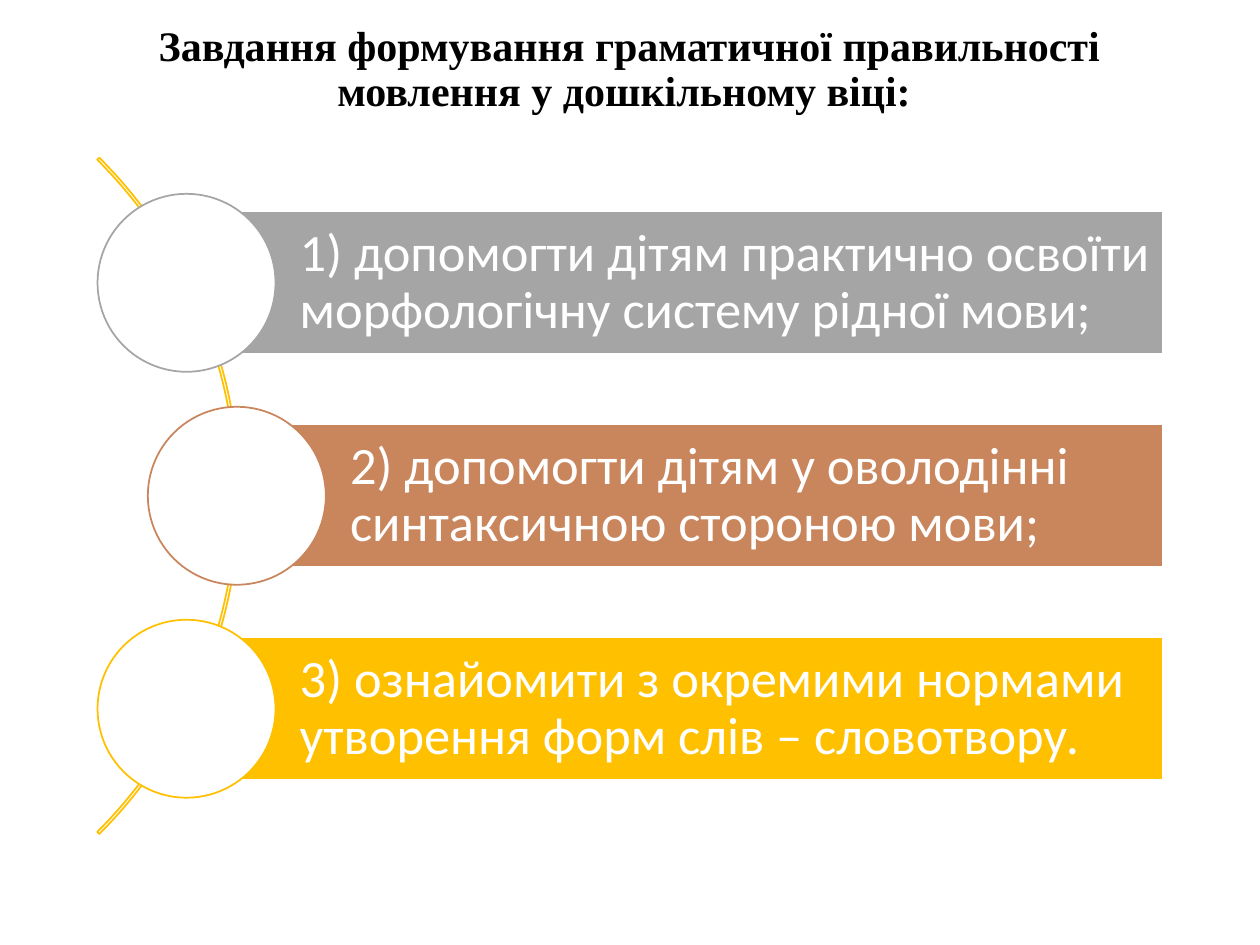
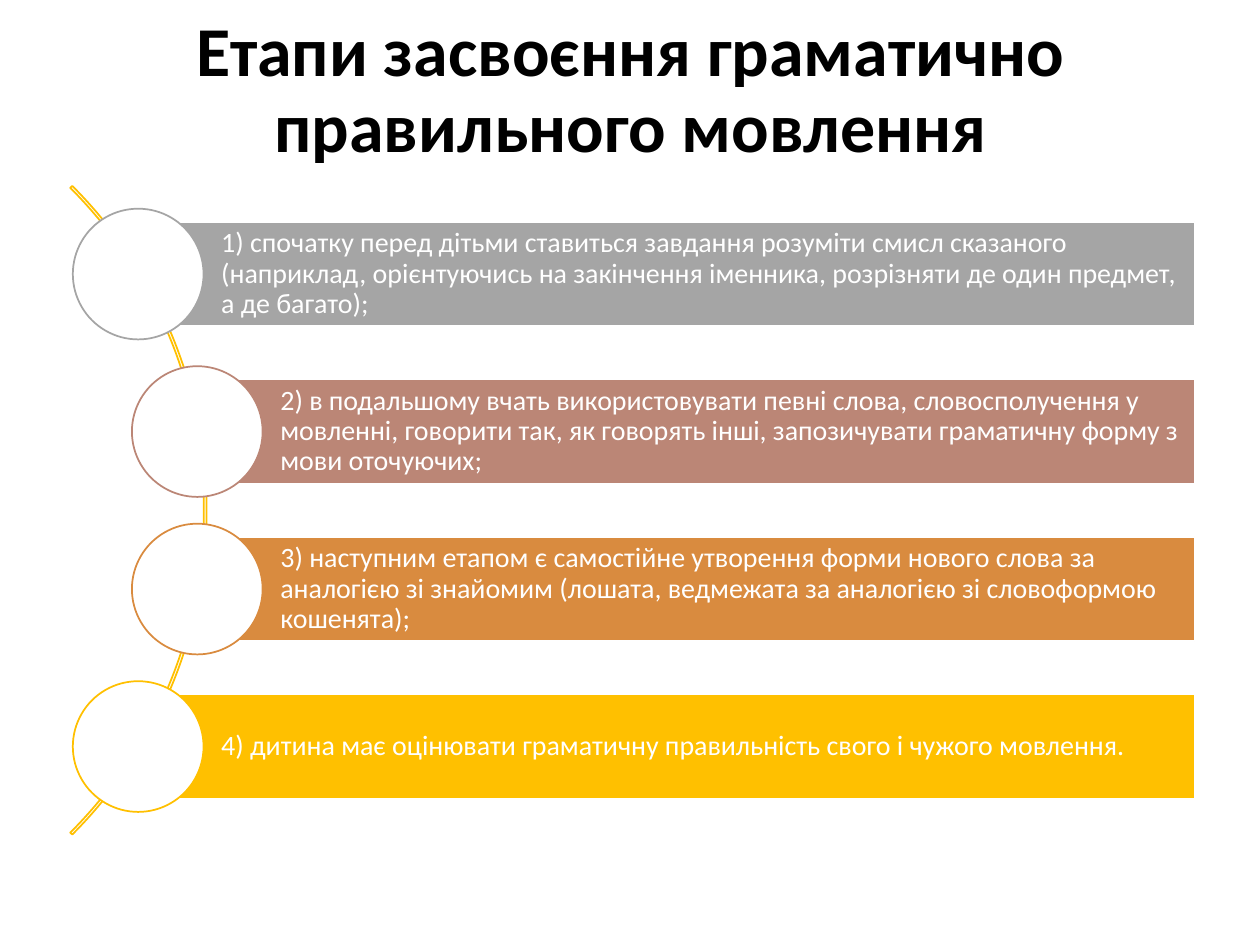
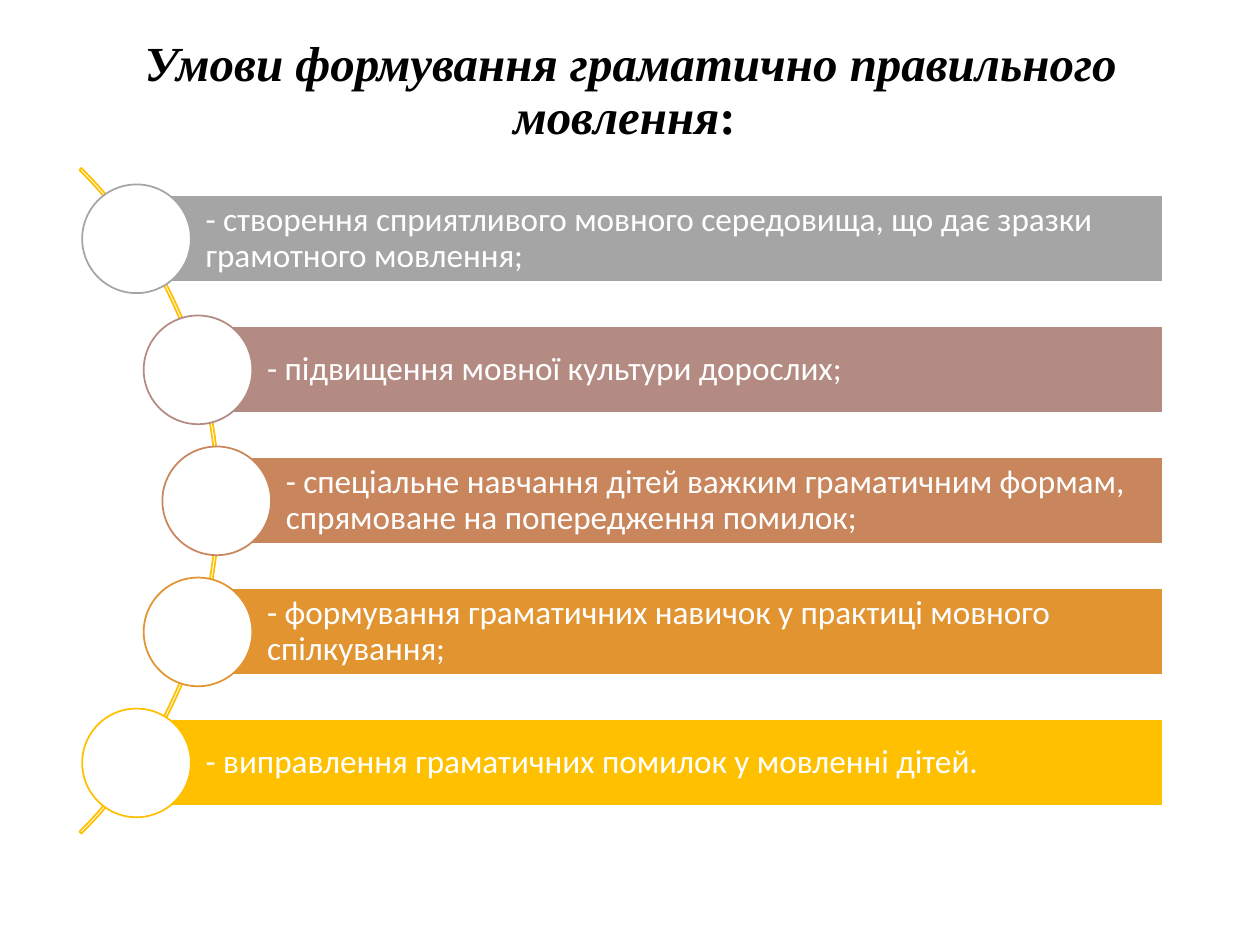
from math import sqrt

from pptx import Presentation
from pptx import util as u
from pptx.dml.color import RGBColor
from pptx.enum import shapes, text

# Shared style
BLACK = RGBColor(0x00, 0x00, 0x00)
WHITE = RGBColor(0xFF, 0xFF, 0xFF)
GREY = RGBColor(0xA5, 0xA5, 0xA5)
MAUVE = RGBColor(0xB4, 0x8B, 0x83)
ROSE = RGBColor(0xBB, 0x86, 0x76)
COPPER = RGBColor(0xC9, 0x85, 0x5C)
ORANGE = RGBColor(0xD9, 0x8B, 0x3F)
AMBER = RGBColor(0xE1, 0x94, 0x30)
GOLD = RGBColor(0xFF, 0xC0, 0x00)
SANS = "Calibri"
SERIF = "Times New Roman"
COLUMNS = 100  # square cells: 100 columns by 75 rows
LINE_SPACING = 0.9


class Deck:
    """Holds the style and the current slide; lengths are grid cells."""

    def __init__(self):
        self.deck = Presentation()
        self.deck.slide_width = u.Inches(10)
        self.deck.slide_height = u.Inches(7.5)
        self.cell = self.deck.slide_width / COLUMNS
        self.page = None

    def cells(self, *counts):
        return [u.Emu(round(count * self.cell)) for count in counts]

    def new_page(self):
        layout = self.deck.slide_layouts[5]  # title only
        self.page = self.deck.slides.add_slide(layout)

    def set_text(self, frame, spans, font, size, color, align, bold=False):
        """Fill a frame with one paragraph of (wording, italic) spans."""
        frame.word_wrap = True
        frame.auto_size = text.MSO_AUTO_SIZE.NONE
        frame.vertical_anchor = text.MSO_ANCHOR.MIDDLE
        para = frame.paragraphs[0]
        para.alignment = align
        para.line_spacing = LINE_SPACING
        for wording, italic in spans:
            span = para.add_run()
            span.text = wording
            if italic:
                span.font.italic = True
        para.font.name = font
        para.font.size = u.Pt(size)
        para.font.bold = bold
        para.font.color.rgb = color

    def title(self, spans, left, width, height, font, size):
        box = self.page.shapes.title
        box.left, box.top, box.width, box.height = self.cells(left, 0, width, height)
        self.set_text(box.text_frame, spans, font, size, BLACK,
                      text.PP_ALIGN.CENTER, bold=True)

    def shape(self, kind, left, top, width, height, fill, line):
        shape = self.page.shapes.add_shape(kind, *self.cells(left, top, width, height))
        shape.shadow.inherit = False
        if fill is None:
            shape.fill.background()
        else:
            shape.fill.solid()
            shape.fill.fore_color.rgb = fill
        shape.line.color.rgb = line
        shape.line.width = u.Pt(1)
        return shape

    def arc(self, left, top, size):
        arc = self.shape(shapes.MSO_SHAPE.BLOCK_ARC, left, top, size, size, None, GOLD)
        for index, value in enumerate((189, 27, 0.003)):  # 315°, 45°, thickness
            arc.adjustments[index] = value

    def bar(self, left, middle, right, height, color, wording, size, margin):
        bar = self.shape(shapes.MSO_SHAPE.RECTANGLE, left, middle - height / 2,
                         right - left, height, color, WHITE)
        frame = bar.text_frame
        frame.margin_left, frame.margin_right = self.cells(0.795 * height, margin)
        frame.margin_top = frame.margin_bottom = frame.margin_right
        self.set_text(frame, [(wording, False)], SANS, size, WHITE, text.PP_ALIGN.LEFT)

    def circle(self, center, middle, size, color):
        self.shape(shapes.MSO_SHAPE.OVAL, center - size / 2, middle - size / 2,
                   size, size, WHITE, color)

    def curved_list(self, items, arc_left, arc_top, arc_size, right, pitch,
                    bar_height, size, margin):
        """Bars evenly spaced down, each starting where the arc passes."""
        self.arc(arc_left, arc_top, arc_size)
        radius = arc_size / 2
        for index, (color, wording) in enumerate(items):
            offset = (index - (len(items) - 1) / 2) * pitch
            middle = arc_top + radius + offset
            left = arc_left + radius + sqrt((radius - 0.2) ** 2 - offset ** 2)
            self.bar(left, middle, right, bar_height, color, wording, size, margin)
            self.circle(left, middle, 1.25 * bar_height, color)


def main():
    show = Deck()

    # Tasks
    show.new_page()
    show.title([("Завдання формування граматичної правильності мовлення "
                 "у дошкільному віці: ", False)], 6.9, 86.1, 11.2, SERIF, 24)
    show.curved_list([
        (GREY, "1) допомогти дітям практично освоїти морфологічну систему рідної мови;"),
        (COPPER, "2) допомогти дітям у оволодінні синтаксичною стороною мови;"),
        (GOLD, "3) ознайомити з окремими нормами утворення форм слів – словотвору."),
    ], arc_left=-56.9, arc_top=1.4, arc_size=75.9, right=92.3, pitch=16.9,
        bar_height=11.3, size=30, margin=0.8)

    # Stages
    show.new_page()
    show.title([("Етапи засвоєння граматично правильного мовлення", False)],
               7.2, 85.7, 14.6, SANS, 40)
    show.curved_list([
        (GREY, "1) спочатку перед дітьми ставиться завдання розуміти смисл сказаного "
               "(наприклад, орієнтуючись на закінчення іменника, розрізняти де один "
               "предмет, а де багато);"),
        (ROSE, "2) в подальшому вчать використовувати певні слова, словосполучення у "
               "мовленні, говорити так, як говорять інші, запозичувати граматичну "
               "форму з мови оточуючих;"),
        (ORANGE, "3) наступним етапом є самостійне утворення форми нового слова за "
                 "аналогією зі знайомим (лошата, ведмежата за аналогією зі "
                 "словоформою кошенята);"),
        (GOLD, "4) дитина має оцінювати граматичну правильність свого і чужого мовлення."),
    ], arc_left=-56.4, arc_top=4.1, arc_size=72.8, right=94.8, pitch=12.5,
        bar_height=8.3, size=16, margin=0.4)

    # Conditions
    show.new_page()
    show.title([("Умови формування граматично правильного мовлення", True),
                (": ", False)], 7.2, 85.7, 14.6, SERIF, 28)
    show.curved_list([
        (GREY, "- створення сприятливого мовного середовища, що дає зразки "
               "грамотного мовлення;"),
        (MAUVE, "- підвищення мовної культури дорослих;"),
        (COPPER, "- спеціальне навчання дітей важким граматичним формам, спрямоване "
                 "на попередження помилок;"),
        (AMBER, "- формування граматичних навичок у практиці мовного спілкування;"),
        (GOLD, "- виправлення граматичних помилок у мовленні дітей."),
    ], arc_left=-57.3, arc_top=2.4, arc_size=74.7, right=92.3, pitch=10.4,
        bar_height=6.9, size=19, margin=0.5)

    show.deck.save("out.pptx")


if __name__ == "__main__":
    main()
